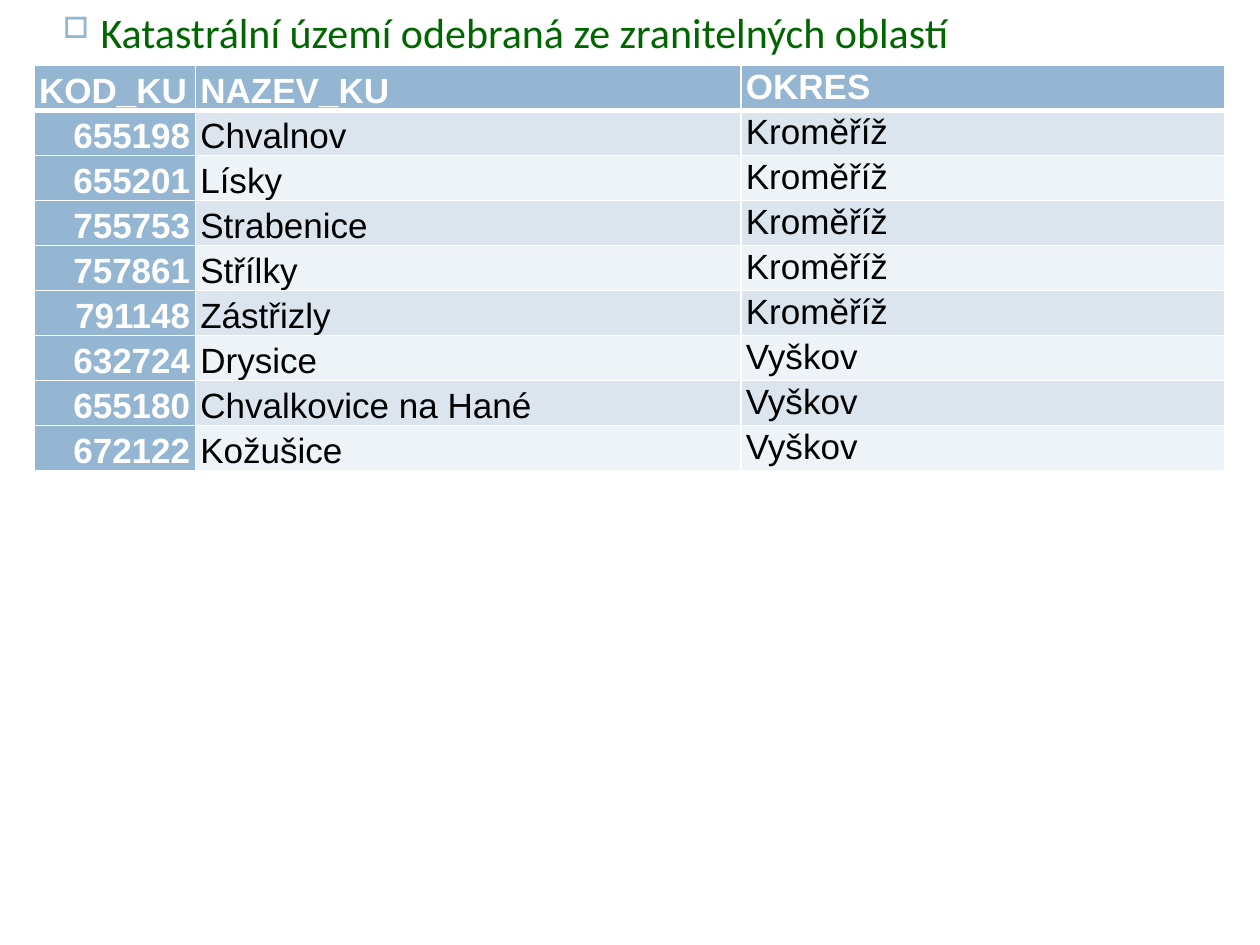
import pptx
import pptx.dml.color
import pptx.enum.text
import pptx.oxml
import pptx.oxml.ns
import pptx.util

Inches, Pt = pptx.util.Inches, pptx.util.Pt
ALIGN, ANCHOR = pptx.enum.text.PP_ALIGN, pptx.enum.text.MSO_ANCHOR

TITLE = "Katastrální území odebraná ze zranitelných oblastí"
HEADER = ("KOD_KU", "NAZEV_KU", "OKRES")
DISTRICTS = {
    "Kroměříž": [
        ("655198", "Chvalnov"),
        ("655201", "Lísky"),
        ("755753", "Strabenice"),
        ("757861", "Střílky"),
        ("791148", "Zástřizly"),
    ],
    "Vyškov": [
        ("632724", "Drysice"),
        ("655180", "Chvalkovice na Hané"),
        ("672122", "Kožušice"),
    ],
}
THEME = {
    "title": {"name": "Calibri", "size": Pt(24), "color": "006600"},
    "head": {"name": "Arial", "size": Pt(20), "bold": True, "color": "FFFFFF"},
    "body": {"name": "Arial", "size": Pt(20), "bold": False, "color": "000000"},
    "accent": "94B6D2",
    "bands": ("DCE5EE", "EEF3F7"),
    "border": "FFFFFF",
    "thin": 1,
    "thick": 3,
}
SLIDE_WIDTH, SLIDE_HEIGHT = 10, 7.5
TABLE_LEFT, TABLE_TOP, TABLE_HEIGHT = 0.27, 0.52, 3.21
COLUMN_WIDTHS = (1.28, 4.33, 3.84)


def rgb(code):
    return pptx.dml.color.RGBColor.from_string(code)


def set_attributes(target, values):
    for name, value in values.items():
        setattr(target, name, value)


def write(paragraph, text, style):
    run = paragraph.add_run()
    run.text = text
    set_attributes(run.font, {k: v for k, v in style.items() if k != "color"})
    run.font.color.rgb = rgb(style["color"])


def add_borders(cell, widths):
    """Draw the left, right, top and bottom borders with widths in points."""
    properties = cell._tc.get_or_add_tcPr()
    for position, (side, width) in enumerate(zip("LRTB", widths)):
        properties.insert(position, pptx.oxml.parse_xml(
            f'<a:ln{side} {pptx.oxml.ns.nsdecls("a")} w="{Pt(width)}"><a:solidFill>'
            f'<a:srgbClr val="{THEME["border"]}"/></a:solidFill></a:ln{side}>'))


def add_title(slide):
    box = slide.shapes.add_textbox(0, 0, Inches(SLIDE_WIDTH), Inches(0.47))
    box.text_frame.word_wrap = True
    paragraph = box.text_frame.paragraphs[0]
    write(paragraph, TITLE, THEME["title"])
    properties = paragraph._p.get_or_add_pPr()
    properties.set("marL", str(Inches(0.7)))
    properties.set("indent", str(Inches(-0.3)))
    for bullet in (f'buClr {{}}><a:srgbClr val="{THEME["accent"]}"/></a:buClr>',
                   'buSzPct {} val="70000"/>', 'buChar {} char="□"/>'):
        properties.append(pptx.oxml.parse_xml(
            "<a:" + bullet.format(pptx.oxml.ns.nsdecls("a"))))


def format_cell(cell, text, row, column):
    accented = row == 0 or column == 0
    cell.fill.solid()
    cell.fill.fore_color.rgb = rgb(
        THEME["accent"] if accented else THEME["bands"][(row - 1) % 2])
    set_attributes(cell, {
        "margin_left": Inches(0.04), "margin_right": Inches(0.04),
        "margin_top": 0, "margin_bottom": 0,
        "vertical_anchor": ANCHOR.TOP if column == 2 else ANCHOR.BOTTOM,
    })
    paragraph = cell.text_frame.paragraphs[0]
    set_attributes(paragraph, {
        "line_spacing": 1.07,
        "alignment": ALIGN.RIGHT if row and column == 0 else ALIGN.LEFT,
    })
    write(paragraph, text, THEME["head" if accented else "body"])
    thin, thick = THEME["thin"], THEME["thick"]
    add_borders(cell, (thin, thin, thick if row == 1 else thin,
                       thick if row == 0 else thin))


def add_territories(slide):
    rows = [HEADER] + [(code, name, district)
                       for district, places in DISTRICTS.items()
                       for code, name in places]
    table = slide.shapes.add_table(
        len(rows), len(HEADER), Inches(TABLE_LEFT), Inches(TABLE_TOP),
        Inches(sum(COLUMN_WIDTHS)), Inches(TABLE_HEIGHT)).table
    table.first_col = True
    for column, width in zip(table.columns, COLUMN_WIDTHS):
        column.width = Inches(width)
    for r, values in enumerate(rows):
        for c, text in enumerate(values):
            format_cell(table.cell(r, c), text, r, c)


def main():
    presentation = pptx.Presentation()
    presentation.slide_width = Inches(SLIDE_WIDTH)
    presentation.slide_height = Inches(SLIDE_HEIGHT)
    slide = presentation.slides.add_slide(presentation.slide_layouts[6])
    add_title(slide)
    add_territories(slide)
    presentation.save("out.pptx")


if __name__ == "__main__":
    main()
